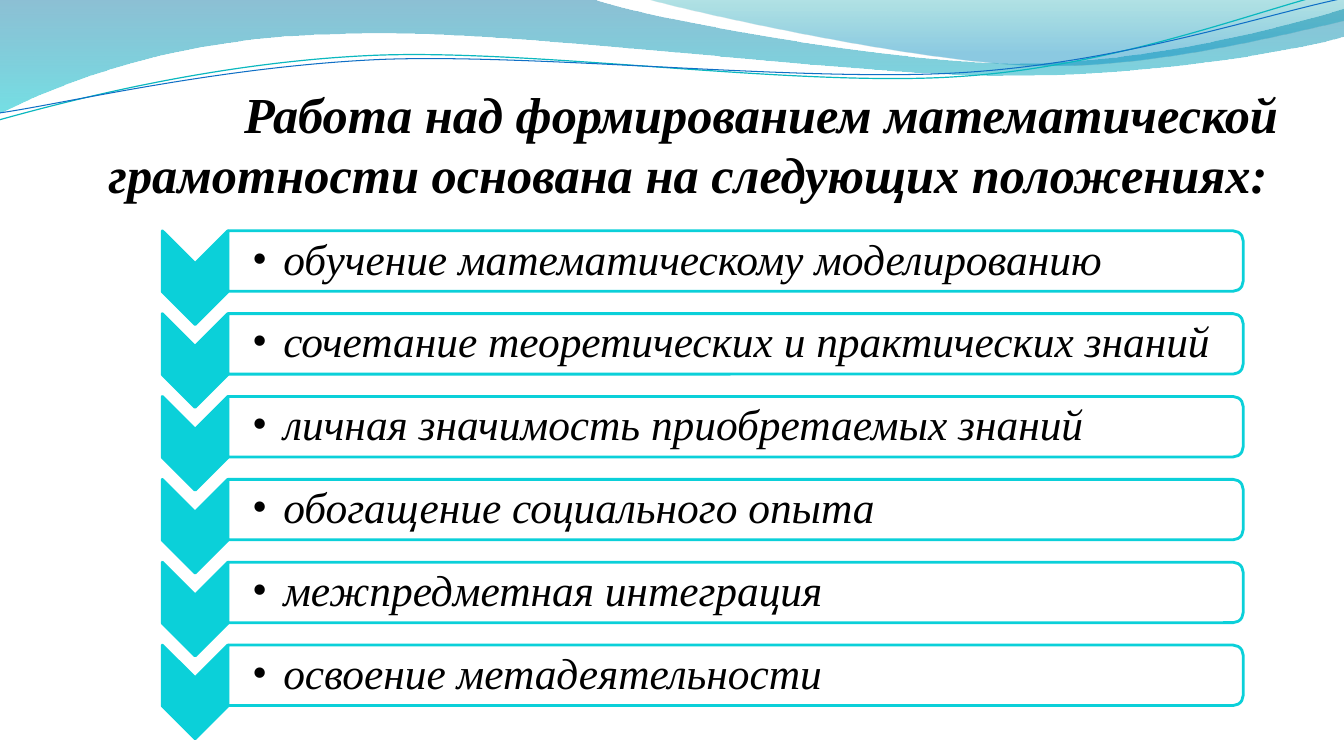
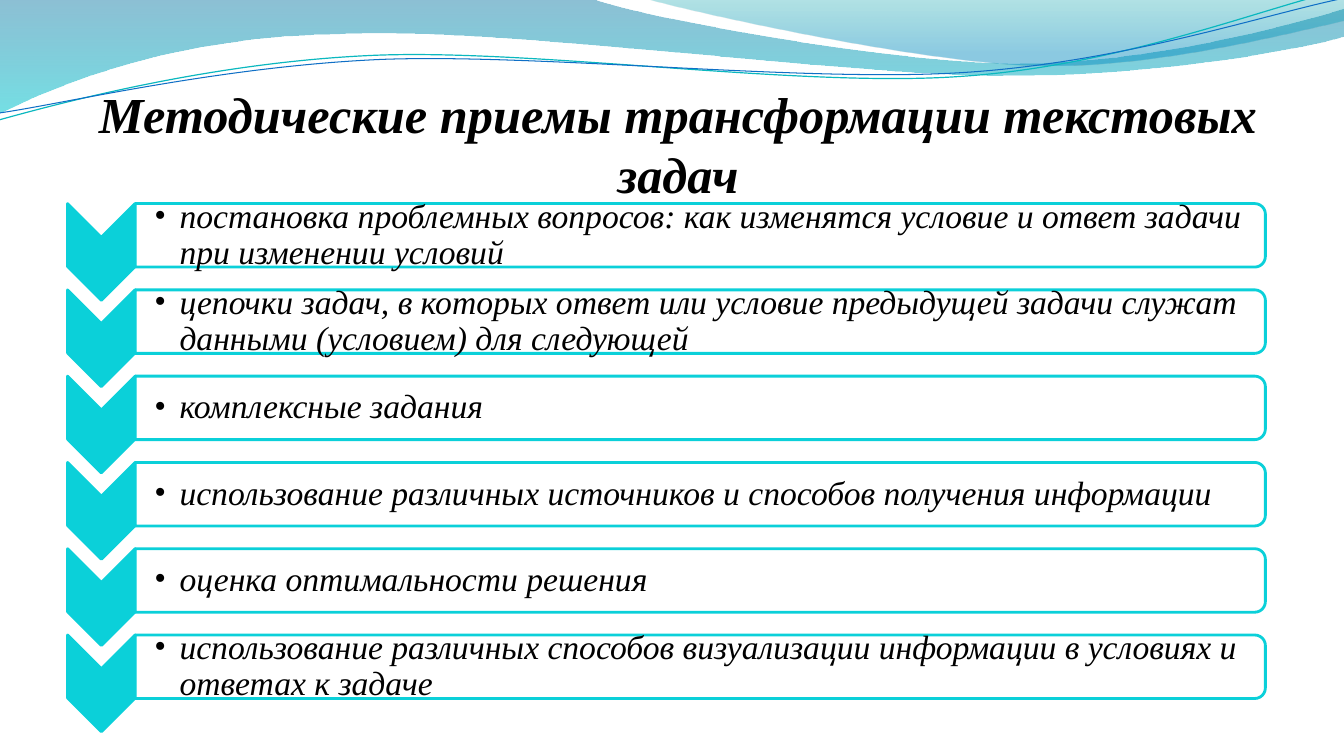
import math
from dataclasses import dataclass

from pptx import Presentation
from pptx import util as u
from pptx.dml.color import RGBColor
from pptx.enum import shapes, text
from pptx.oxml.ns import qn
from pptx.oxml.xmlchemy import OxmlElement


@dataclass(frozen=True)
class Theme:
    font: str = "Times New Roman"
    ink: str = "000000"
    paper: str = "FFFFFF"
    accent: str = "0BD0D9"
    title_size: float = 36
    border: float = 2


THEME = Theme()

# Content; lengths in inches, sizes in points
SLIDES = [
    {
        "title": "Работа над формированием математической "
                 "грамотности основана на следующих положениях:",
        "title_at": (0.77, 0.79, 12.11, 1.88),
        "title_indent": 1.45, "title_bottom": 0.65,
        "left": 1.61, "first_top": 2.29, "last_top": 6.4,
        "chevron": (0.65, 0.93), "bar": (10.07, 0.6),
        "size": 31, "inset": 0.24, "hanging": 0.31,
        "items": [
            "обучение математическому моделированию",
            "сочетание теоретических и практических знаний",
            "личная значимость приобретаемых знаний",
            "обогащение социального опыта",
            "межпредметная интеграция",
            "освоение метадеятельности",
        ],
    },
    {
        "title": "Методические приемы трансформации текстовых задач",
        "title_at": (0.67, 0.77, 12.11, 1.25),
        "title_indent": 0, "title_bottom": 0,
        "left": 0.67, "first_top": 2.02, "last_top": 6.3,
        "chevron": (0.67, 0.96), "bar": (11.21, 0.63),
        "size": 24, "inset": 0.19, "hanging": 0.25,
        "items": [
            "постановка проблемных вопросов: как изменятся условие "
            "и ответ задачи при изменении условий",
            "цепочки задач, в которых ответ или условие предыдущей задачи "
            "служат данными (условием) для следующей",
            "комплексные задания",
            "использование различных источников и способов получения информации",
            "оценка оптимальности решения",
            "использование различных способов визуализации информации "
            "в условиях и ответах к задаче",
        ],
    },
]

# Waves: a start point, then lines (2 numbers) and Bezier curves (6 numbers).
# Gradient stops hold position, colour and opacity in percent.
# A turned wave has a pivot and is rotated by TURN degrees.
TURN = -2.7
WAVES = [
    {"start": (0, 0),
     "steps": [(5.87, -0.01), (6.34, 0.17, 8.85, 0.63, 10.11, 0.63),
               (11.38, 0.63, 12.78, 0.26, 13.33, 0.09), (13.35, 0.36),
               (13.11, 0.44, 11.6, 0.76, 9.94, 0.75),
               (8.29, 0.75, 5.09, 0.28, 3.43, 0.34),
               (1.72, 0.36, 0.61, 0.83, -0.01, 1.13), (0, 0)],
     "gradient": [(0, "0074A1", 45), (1, "00C6CF", 55)]},
    {"start": (6.39, -0.01),
     "steps": [(6.79, 0.11, 9.09, 0.62, 10.25, 0.65),
               (11.41, 0.69, 12.82, 0.32, 13.33, 0.21), (13.33, 0), (6.39, -0.01)],
     "gradient": [(0, "00A1A9", 30), (0.8, "008BBF", 45)]},
    {"start": (-0.01, 1.19),
     "steps": [(0.64, 1.01, 2.11, 0.62, 3.69, 0.55),
               (5.27, 0.48, 7.9, 0.87, 9.5, 0.76),
               (11.1, 0.66, 12.52, 0.08, 13.31, -0.1)],
     "line": ("0AB8BF", 0.85), "pivot": (6.65, 0.57)},
    {"start": (0, 1.12),
     "steps": [(0.63, 1.03, 2.18, 0.66, 3.78, 0.59),
               (5.37, 0.53, 7.96, 0.82, 9.55, 0.72),
               (11.15, 0.62, 12.55, 0.14, 13.34, -0.02)],
     "line": ("0F6FC6", 0.75), "pivot": (6.67, 0.59)},
]


def rgb(value):
    return RGBColor.from_string(value)


def set_opacity(color_node, percent):
    alpha = OxmlElement("a:alpha")
    alpha.set("val", str(percent * 1000))
    color_node.append(alpha)


def wave_point(wave, x, y):
    """Give a point in EMU, with the rotation of a turned wave undone."""
    if "pivot" in wave:
        px, py = wave["pivot"]
        cos, sin = math.cos(math.radians(-TURN)), math.sin(math.radians(-TURN))
        dx, dy = x - px, y - py
        x, y = px + dx * cos - dy * sin, py + dx * sin + dy * cos
    return u.Inches(x), u.Inches(y)


def bend(shape, strokes):
    """Replace straight segments by curves where a stroke has control points."""
    segments = list(shape.element.iter(qn("a:lnTo")))
    left, top = shape.left, shape.top
    for segment, points in zip(segments, strokes):
        if len(points) == 1:
            continue
        curve = OxmlElement("a:cubicBezTo")
        for x, y in points:
            point = OxmlElement("a:pt")
            point.set("x", str(x - left))
            point.set("y", str(y - top))
            curve.append(point)
        segment.getparent().replace(segment, curve)


def draw_wave(page, wave):
    strokes = [[wave_point(wave, *step[i:i + 2]) for i in range(0, len(step), 2)]
               for step in wave["steps"]]
    builder = page.shapes.build_freeform(*wave_point(wave, *wave["start"]))
    builder.add_line_segments([points[-1] for points in strokes], close="gradient" in wave)
    shape = builder.convert_to_shape()
    bend(shape, strokes)
    shape.shadow.inherit = False
    if "line" in wave:
        color, width = wave["line"]
        shape.rotation = TURN
        shape.fill.background()
        shape.line.color.rgb = rgb(color)
        shape.line.width = u.Pt(width)
        return shape
    shape.line.fill.background()
    shape.fill.gradient()
    shape.fill.gradient_angle = 270
    for stop, (position, color, _) in zip(shape.fill.gradient_stops, wave["gradient"]):
        stop.position = position
        stop.color.rgb = rgb(color)
    for node, (_, _, opacity) in zip(shape.element.iter(qn("a:srgbClr")), wave["gradient"]):
        set_opacity(node, opacity)
    return shape


def move_to_layout(layout, drawn):
    """Place shapes behind everything else on the layout."""
    for index, shape in enumerate(drawn):
        shape.element.nvSpPr.cNvPr.set("id", str(100 + index))
        layout.shapes.element.insert(2 + index, shape.element)


def set_frame(frame, anchor, insets):
    frame.word_wrap = True
    frame.auto_size = text.MSO_AUTO_SIZE.NONE
    frame.vertical_anchor = anchor
    (frame.margin_left, frame.margin_top,
     frame.margin_right, frame.margin_bottom) = map(u.Inches, insets)


def write(para, words, size, bold, align, margin, indent):
    para.text = words
    para.alignment = align
    font = para.font
    font.name, font.size, font.bold, font.italic = THEME.font, u.Pt(size), bold, True
    font.color.rgb = rgb(THEME.ink)
    properties = para._p.get_or_add_pPr()
    properties.set("marL", str(u.Inches(margin)))
    properties.set("indent", str(u.Inches(indent)))
    return properties


def add_title(page, content):
    title = page.shapes.title
    title.left, title.top, title.width, title.height = map(u.Inches, content["title_at"])
    set_frame(title.text_frame, text.MSO_ANCHOR.BOTTOM,
              (0, 0.05, 0, content["title_bottom"]))
    write(title.text_frame.paragraphs[0], content["title"], THEME.title_size, True,
          text.PP_ALIGN.CENTER, 0, content["title_indent"])


def add_turned(page, kind, left, top, width, height, fill, opacity=100):
    """Add a shape turned by 90 degrees that covers the given area."""
    shift = (width - height) / 2
    shape = page.shapes.add_shape(kind, u.Inches(left + shift), u.Inches(top - shift),
                                  u.Inches(height), u.Inches(width))
    shape.rotation = 90
    shape.shadow.inherit = False
    shape.fill.solid()
    shape.fill.fore_color.rgb = rgb(fill)
    if opacity < 100:
        set_opacity(next(shape.element.iter(qn("a:srgbClr"))), opacity)
    shape.line.color.rgb = rgb(THEME.accent)
    shape.line.width = u.Pt(THEME.border)


def add_row(page, content, top, words):
    left = content["left"]
    bar_left = left + content["chevron"][0]
    bar_width, bar_height = content["bar"]
    pad = 0.03
    add_turned(page, shapes.MSO_SHAPE.CHEVRON, left, top, *content["chevron"], THEME.accent)
    add_turned(page, shapes.MSO_SHAPE.ROUND_2_SAME_RECTANGLE, bar_left, top,
               bar_width, bar_height, THEME.paper, 90)
    box = page.shapes.add_textbox(u.Inches(bar_left), u.Inches(top + pad),
                                  u.Inches(bar_width - pad), u.Inches(bar_height - 2 * pad))
    set_frame(box.text_frame, text.MSO_ANCHOR.MIDDLE, (content["inset"], 0.02, 0.02, 0.02))
    para = box.text_frame.paragraphs[0]
    para.level = 1
    para.line_spacing = 0.9
    properties = write(para, words, content["size"], False, text.PP_ALIGN.LEFT,
                       content["hanging"], -content["hanging"])
    for tag, name, value in (("a:buFont", "typeface", THEME.font), ("a:buChar", "char", "•")):
        bullet = OxmlElement(tag)
        bullet.set(name, value)
        properties.insert_element_before(bullet, "a:tabLst", "a:defRPr", "a:extLst")


def main():
    deck = Presentation()
    deck.slide_width, deck.slide_height = u.Inches(13.33), u.Inches(7.5)
    layout = deck.slide_layouts[5]
    for content in SLIDES:
        page = deck.slides.add_slide(layout)
        add_title(page, content)
        items = content["items"]
        pitch = (content["last_top"] - content["first_top"]) / (len(items) - 1)
        for index, words in enumerate(items):
            add_row(page, content, content["first_top"] + index * pitch, words)
    # The waves are shared by way of the layout
    move_to_layout(layout, [draw_wave(deck.slides[0], wave) for wave in WAVES])
    deck.save("out.pptx")


if __name__ == "__main__":
    main()
